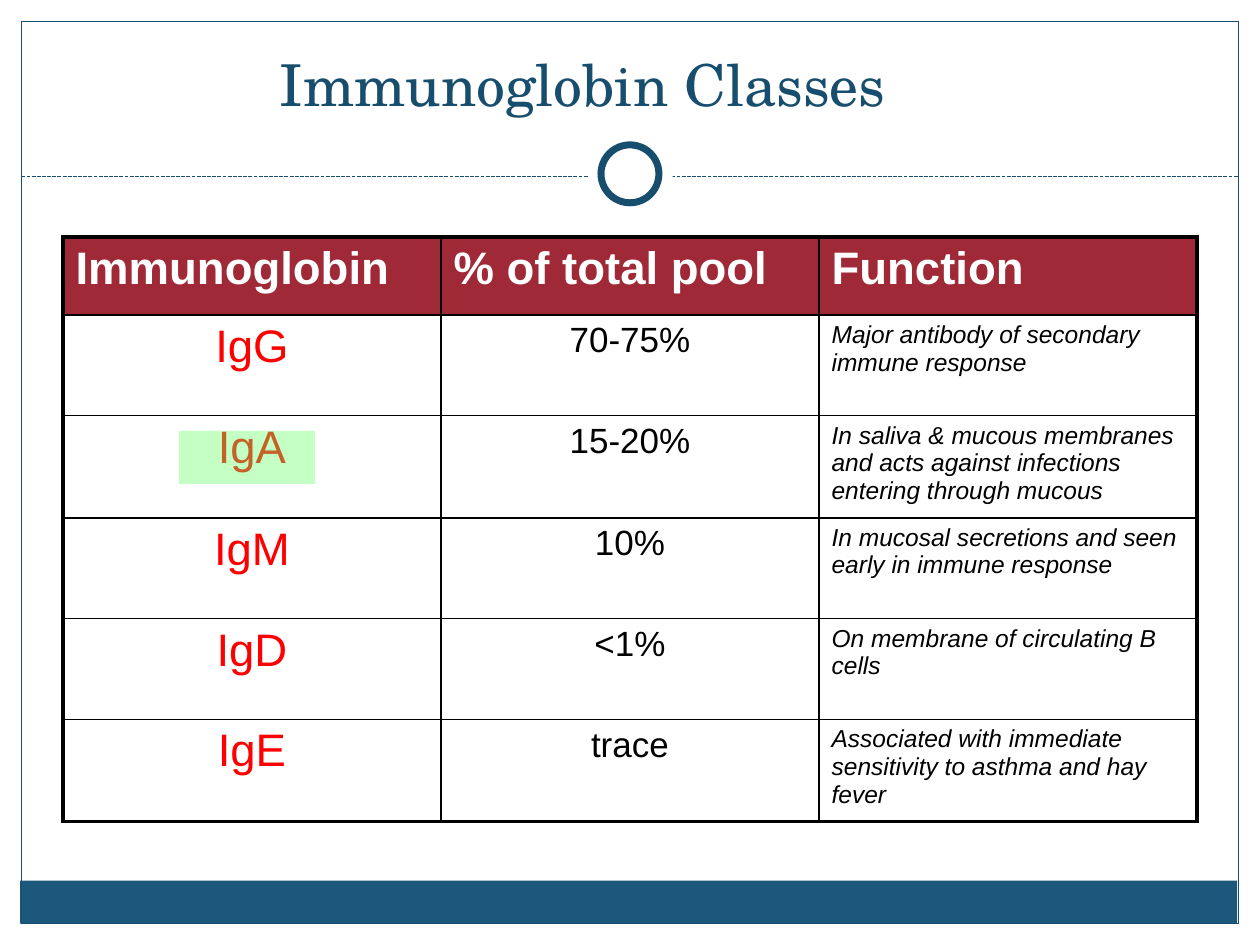
from lxml.etree import SubElement
from pptx import Presentation
from pptx.dml.color import RGBColor
from pptx.enum.dml import MSO_LINE
from pptx.enum.shapes import MSO_CONNECTOR, MSO_SHAPE
from pptx.enum.text import MSO_ANCHOR, PP_ALIGN
from pptx.oxml import parse_xml
from pptx.oxml.ns import nsdecls, qn
from pptx.util import Inches, Pt

# Content
TITLE = "Immunoglobin Classes"
HEAD = ("Immunoglobin", "% of total pool", "Function")
ROWS = [
    ("IgG", "70-75%", "Major antibody of secondary immune response"),
    ("IgA", "15-20%", "In saliva & mucous membranes and acts against "
                      "infections entering through mucous"),
    ("IgM", "10%", "In mucosal secretions and seen early in immune response"),
    ("IgD", "<1%", "On membrane of circulating B cells"),
    ("IgE", "trace", "Associated with immediate sensitivity to asthma and hay fever"),
]
HIGHTS = (0.62, 0.8, 0.81, 0.8, 0.8, 0.81)

# Styles: size, colour, bold, italic, alignment
HEAD_STYLE = (26, "FFFFFF", True, False, PP_ALIGN.LEFT)
COL_STYLES = [
    (26, "FF0000", False, False, PP_ALIGN.CENTER),
    (20, "000000", False, False, PP_ALIGN.CENTER),
    (14, "000000", False, True, PP_ALIGN.LEFT),
]
NAVY, BLUE, RED, WHITE = "184E6D", "1B587C", "9F2936", "FFFFFF"
THICK, THIN = 2.25, 1


def paint(form, code):
    """Set a solid fill from a hex string."""
    form.solid()
    form.fore_color.rgb = RGBColor.from_string(code)


def add_form(kind, box, fill=None, line=None, width=0.75):
    form = slide.shapes.add_shape(kind, *map(Inches, box))
    form.shadow.inherit = False
    if fill:
        paint(form.fill, fill)
    else:
        form.fill.background()
    if line:
        paint(form.line.fill, line)
        form.line.width = Pt(width)
    else:
        form.line.fill.background()
    return form


def add_edges(cell, widths):
    """Draw black borders in the order left, right, top, bottom."""
    props = cell._tc.get_or_add_tcPr()
    for i, (side, width) in enumerate(zip("LRTB", widths)):
        props.insert(i, parse_xml(
            f'<a:ln{side} {nsdecls("a")} w="{Pt(width)}"><a:solidFill>'
            f'<a:srgbClr val="000000"/></a:solidFill></a:ln{side}>'))


def set_text(frame, text, style, face):
    size, code, bold, slant, align = style
    frame.text = text
    para = frame.paragraphs[0]
    para.alignment = align
    font = para.font
    font.name, font.size, font.bold, font.italic = face, Pt(size), bold, slant
    paint(font.fill, code)


deck = Presentation()
deck.slide_width, deck.slide_height = Inches(10), Inches(7.5)
slide = deck.slides.add_slide(deck.slide_layouts[5])

# Frame, footer band, dashed rule and ring
add_form(MSO_SHAPE.RECTANGLE, (0.16, 6.99, 9.66, 0.34), BLUE)
add_form(MSO_SHAPE.RECTANGLE, (0.17, 0.17, 9.66, 7.16), line=NAVY)
rule = slide.shapes.add_connector(
    MSO_CONNECTOR.STRAIGHT, *map(Inches, (0.17, 1.4, 9.83, 1.4)))
paint(rule.line.fill, NAVY)
rule.line.width = Pt(0.75)
rule.line.dash_style = MSO_LINE.SQUARE_DOT
SubElement(rule._element.spPr, qn("a:effectLst"))
add_form(MSO_SHAPE.OVAL, (4.67, 1.05, 0.67, 0.67), WHITE)
add_form(MSO_SHAPE.OVAL, (4.77, 1.15, 0.46, 0.46), WHITE, NAVY, 4)

# Title
title = slide.shapes.title
title.left, title.top, title.width, title.height = map(
    Inches, (0.5, 0.13, 8.25, 0.86))
set_text(title.text_frame, TITLE,
         (33, NAVY, False, False, PP_ALIGN.CENTER), "TeX Gyre Schola")
title.text_frame.vertical_anchor = MSO_ANCHOR.BOTTOM

# Table
grid = [HEAD] + ROWS
table = slide.shapes.add_table(
    len(grid), len(HEAD), *map(Inches, (0.5, 1.88, 9, sum(HIGHTS)))).table
for col in table.columns:
    col.width = Inches(3)
for r, (row, high) in enumerate(zip(grid, HIGHTS)):
    table.rows[r].height = Inches(high)
    for c, text in enumerate(row):
        cell = table.cell(r, c)
        set_text(cell.text_frame, text, COL_STYLES[c] if r else HEAD_STYLE, "Arial")
        paint(cell.fill, WHITE if r else RED)
        outer = (c == 0, c == len(HEAD) - 1, r == 0, r == len(grid) - 1)
        add_edges(cell, [THICK if edge else THIN for edge in outer])

# Translucent highlight over IgA
mark = add_form(MSO_SHAPE.RECTANGLE, (1.42, 3.42, 1.08, 0.42), "66FF66")
tint = mark._element.spPr.find(qn("a:solidFill"))[0]
SubElement(tint, qn("a:alpha"), val="38000")

deck.save("out.pptx")
